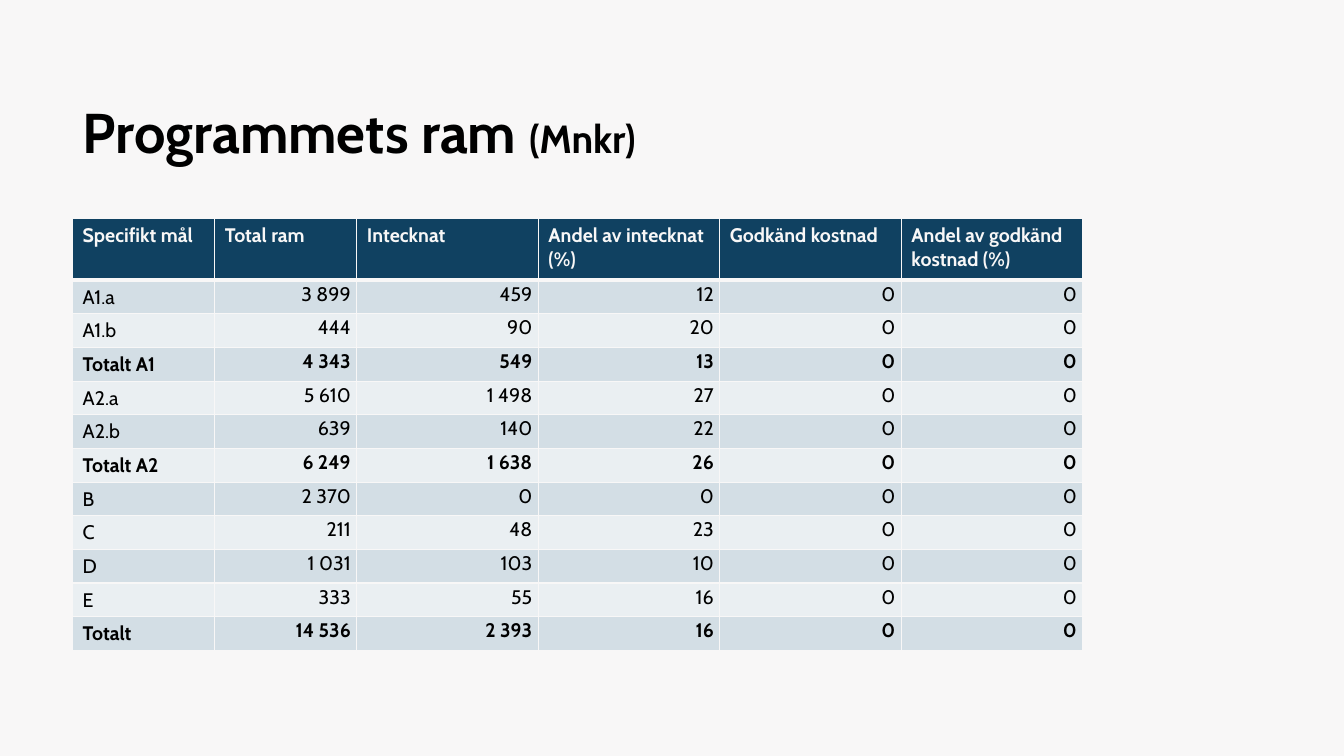
import pptx
import pptx.dml.color
import pptx.enum.text
import pptx.oxml
import pptx.oxml.ns
import pptx.util

Inches, Pt = pptx.util.Inches, pptx.util.Pt
RGB = pptx.dml.color.RGBColor.from_string

TITLE, UNIT = "Programmets ram ", "(Mnkr)"
HEADINGS = ["Specifikt mål", "Total ram", "Intecknat", "Andel av intecknat (%)",
            "Godkänd kostnad", "Andel av godkänd kostnad (%)"]
GOALS = [
    ("A1.a", "3 899", "459", "12", "0", "0"),
    ("A1.b", "444", "90", "20", "0", "0"),
    ("Totalt A1", "4 343", "549", "13", "0", "0"),
    ("A2.a", "5 610", "1 498", "27", "0", "0"),
    ("A2.b", "639", "140", "22", "0", "0"),
    ("Totalt A2", "6 249", "1 638", "26", "0", "0"),
    ("B", "2 370", "0", "0", "0", "0"),
    ("C", "211", "48", "23", "0", "0"),
    ("D", "1 031", "103", "10", "0", "0"),
    ("E", "333", "55", "16", "0", "0"),
    ("Totalt", "14 536", "2 393", "16", "0", "0"),
]
COLUMN_WIDTHS = [1.41, 1.41, 1.8, 1.8, 1.8, 1.8]
HEADING_HEIGHT, GOAL_HEIGHT = 0.61, 0.31
LEFT, TITLE_TOP, TABLE_TOP = 0.72, 0.62, 2.17

THEME = {
    "font": "Cabin", "paper": "F8F7F7", "ink": "000000", "heading": "104161",
    "bands": ("D3DEE5", "EAEFF2"),
    "title_size": 40, "unit_size": 28, "table_size": 14,
}


def style(font, size, color, bold):
    font.name, font.size, font.bold = THEME["font"], Pt(size), bold
    font.color.rgb = RGB(color)


def add_borders(cell, bottom_width):
    properties = cell._tc.get_or_add_tcPr()
    widths = {"lnL": 1, "lnR": 1, "lnT": 1, "lnB": bottom_width}
    for place, (side, width) in enumerate(widths.items()):
        properties.insert(place, pptx.oxml.parse_xml(
            f'<a:{side} {pptx.oxml.ns.nsdecls("a")} w="{Pt(width)}"><a:solidFill>'
            f'<a:srgbClr val="{THEME["paper"]}"/></a:solidFill></a:{side}>'))


def fill_cell(cell, text, background, color, bold, bottom_width=1):
    cell.text = text
    cell.fill.solid()
    cell.fill.fore_color.rgb = RGB(background)
    style(cell.text_frame.paragraphs[0].font, THEME["table_size"], color, bold)
    add_borders(cell, bottom_width)


def align_amount(cell):
    cell.vertical_anchor = pptx.enum.text.MSO_ANCHOR.MIDDLE
    cell.margin_left = cell.margin_right = Inches(0.06)
    cell.margin_top = cell.margin_bottom = 0
    amount = cell.text_frame.paragraphs[0]
    amount.alignment = pptx.enum.text.PP_ALIGN.RIGHT
    amount.line_spacing, amount.space_after = Pt(13), Pt(2)


def add_title(slide):
    frame = slide.shapes.add_textbox(
        Inches(LEFT), Inches(TITLE_TOP), Inches(9.97), Inches(1.45)).text_frame
    frame.word_wrap = True
    frame.vertical_anchor = pptx.enum.text.MSO_ANCHOR.MIDDLE
    heading = frame.paragraphs[0]
    heading.line_spacing = 0.9
    for text, size in ((TITLE, THEME["title_size"]), (UNIT, THEME["unit_size"])):
        run = heading.add_run()
        run.text = text
        style(run.font, size, THEME["ink"], True)


def add_budget(slide):
    height = HEADING_HEIGHT + GOAL_HEIGHT * len(GOALS)
    budget = slide.shapes.add_table(
        len(GOALS) + 1, len(HEADINGS), Inches(LEFT), Inches(TABLE_TOP),
        Inches(sum(COLUMN_WIDTHS)), Inches(height)).table
    for column, width in zip(budget.columns, COLUMN_WIDTHS):
        column.width = Inches(width)
    for index, row in enumerate(budget.rows):
        row.height = Inches(GOAL_HEIGHT if index else HEADING_HEIGHT)
    for column, heading in enumerate(HEADINGS):
        fill_cell(budget.cell(0, column), heading, THEME["heading"], THEME["paper"], True, 3)
    for index, goal in enumerate(GOALS):
        for column, text in enumerate(goal):
            cell = budget.cell(index + 1, column)
            fill_cell(cell, text, THEME["bands"][index % 2], THEME["ink"],
                      goal[0].startswith("Totalt"))
            if column:
                align_amount(cell)


def main():
    deck = pptx.Presentation()
    deck.slide_width, deck.slide_height = Inches(13.33), Inches(7.5)
    slide = deck.slides.add_slide(deck.slide_layouts[6])
    slide.background.fill.solid()
    slide.background.fill.fore_color.rgb = RGB(THEME["paper"])
    add_title(slide)
    add_budget(slide)
    deck.save("out.pptx")


if __name__ == "__main__":
    main()
